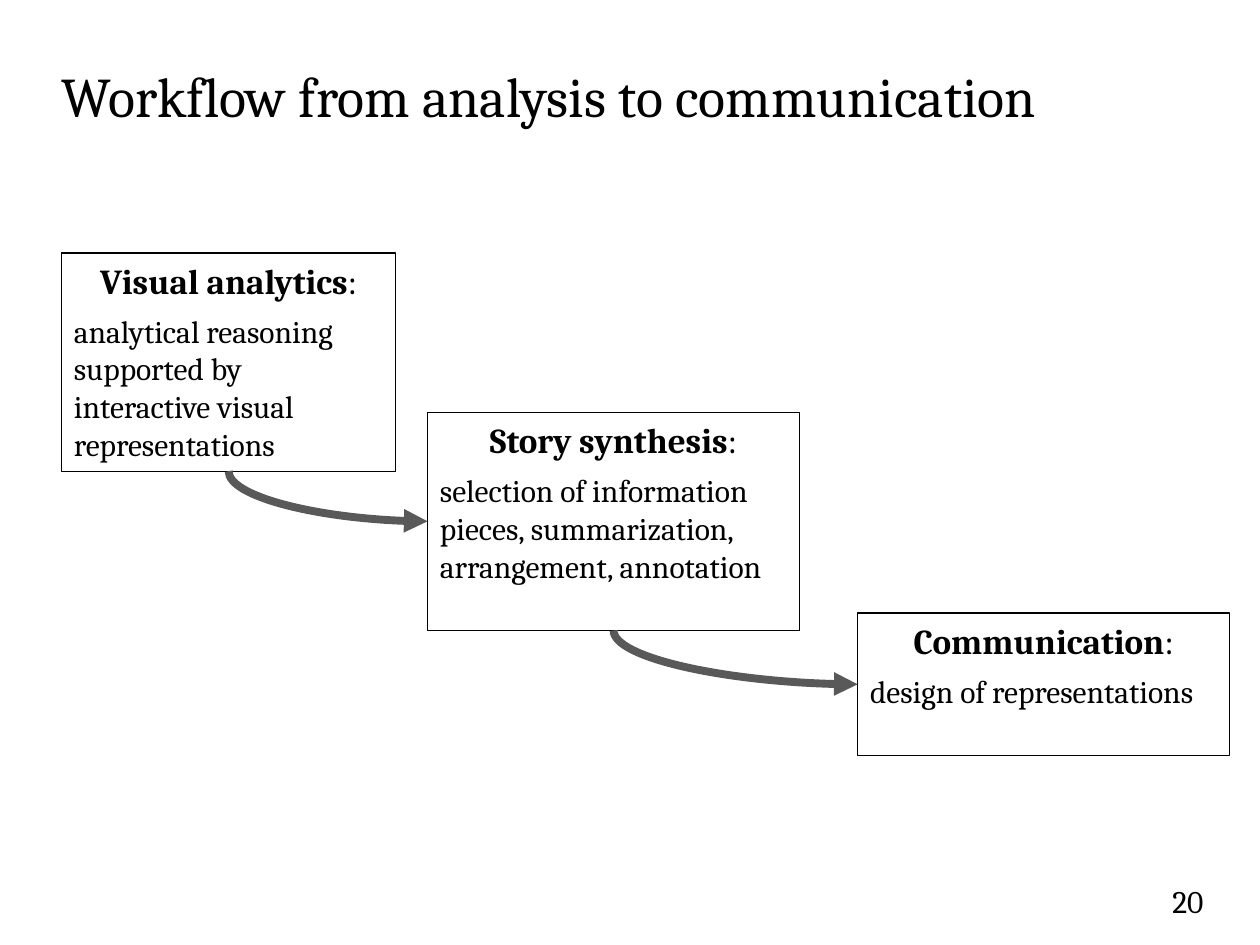
import pptx
import pptx.dml.color
import pptx.enum.shapes
import pptx.enum.text
import pptx.oxml.ns
import pptx.util
from lxml import etree
from pptx.util import Cm

BLACK = pptx.dml.color.RGBColor(0x00, 0x00, 0x00)
GREY = pptx.dml.color.RGBColor(0x59, 0x59, 0x59)
FONT = "Cambria"
ALIGN = pptx.enum.text.PP_ALIGN
ANCHOR = pptx.enum.text.MSO_ANCHOR


def style_paragraph(para, size, alignment):
    para.alignment = alignment
    for span in para.runs:
        span.font.name = FONT
        span.font.size = pptx.util.Pt(size)
        span.font.color.rgb = BLACK


def add_curved_arrow(page, start_x, start_y, end_x, end_y):
    """Curve that leaves downwards and arrives from the left."""
    # The preset leaves sideways, so it is mirrored and turned about its centre
    middle_x, middle_y = (start_x + end_x) // 2, (start_y + end_y) // 2
    half_run, half_drop = (end_x - start_x) // 2, (end_y - start_y) // 2
    arrow = page.shapes.add_connector(
        pptx.enum.shapes.MSO_CONNECTOR.CURVE,
        middle_x + half_drop, middle_y - half_run,
        middle_x - half_drop, middle_y + half_run)
    arrow.line.color.rgb = GREY
    arrow.line.width = pptx.util.Pt(4.5)
    properties = arrow._element.spPr
    properties.find(pptx.oxml.ns.qn("a:xfrm")).set("rot", str(270 * 60000))
    properties.find(pptx.oxml.ns.qn("a:prstGeom")).set("prst", "curvedConnector2")
    line = properties.find(pptx.oxml.ns.qn("a:ln"))
    etree.SubElement(line, pptx.oxml.ns.qn("a:tailEnd"), type="triangle")
    etree.SubElement(properties, pptx.oxml.ns.qn("a:effectLst"))


deck = pptx.Presentation()
deck.slide_width = Cm(25.4)
deck.slide_height = Cm(19.05)
page = deck.slides.add_slide(deck.slide_layouts[6])

# Title
title = page.shapes.add_textbox(Cm(1), Cm(0.76), Cm(23.5), Cm(2.5))
title.text_frame.word_wrap = True
title.text_frame.vertical_anchor = ANCHOR.MIDDLE
title.text_frame.text = "Workflow from analysis to communication"
title.text_frame.paragraphs[0].line_spacing = 0.9
style_paragraph(title.text_frame.paragraphs[0], 32, ALIGN.LEFT)

# Workflow steps: left, top, width, height, heading, description
STEPS = [
    (1.24, 5.1, 6.74, 4.4, "Visual analytics",
     "analytical reasoning supported by interactive visual representations"),
    (8.62, 8.31, 7.5, 4.4, "Story synthesis",
     "selection of information pieces, summarization, arrangement, annotation"),
    (17.29, 12.36, 7.5, 2.87, "Communication",
     "design of representations"),
]
boxes = []
for left, top, width, height, heading, description in STEPS:
    box = page.shapes.add_shape(
        pptx.enum.shapes.MSO_SHAPE.RECTANGLE,
        Cm(left), Cm(top), Cm(width), Cm(height))
    box.shadow.inherit = False
    box.fill.background()
    box.line.color.rgb = BLACK
    box.line.width = pptx.util.Pt(0.75)
    frame = box.text_frame
    frame.word_wrap = True
    frame.vertical_anchor = ANCHOR.TOP
    frame.text = heading
    para = frame.paragraphs[0]
    para.add_run().text = ":"
    style_paragraph(para, 20, ALIGN.CENTER)
    para.runs[0].font.bold = True
    para = frame.add_paragraph()
    para.text = description
    para.space_before = pptx.util.Pt(6)
    style_paragraph(para, 18, ALIGN.LEFT)
    boxes.append(box)

# Arrows from the bottom of each step to the left side of the next
for source, target in zip(boxes, boxes[1:]):
    add_curved_arrow(
        page,
        source.left + source.width // 2, source.top + source.height,
        target.left, target.top + target.height // 2)

# Slide number
number = page.shapes.add_textbox(Cm(21.64), Cm(17.65), Cm(2.87), Cm(1.02))
number.text_frame.word_wrap = True
number.text_frame.text = "20"
style_paragraph(number.text_frame.paragraphs[0], 18, ALIGN.RIGHT)

deck.save("out.pptx")
